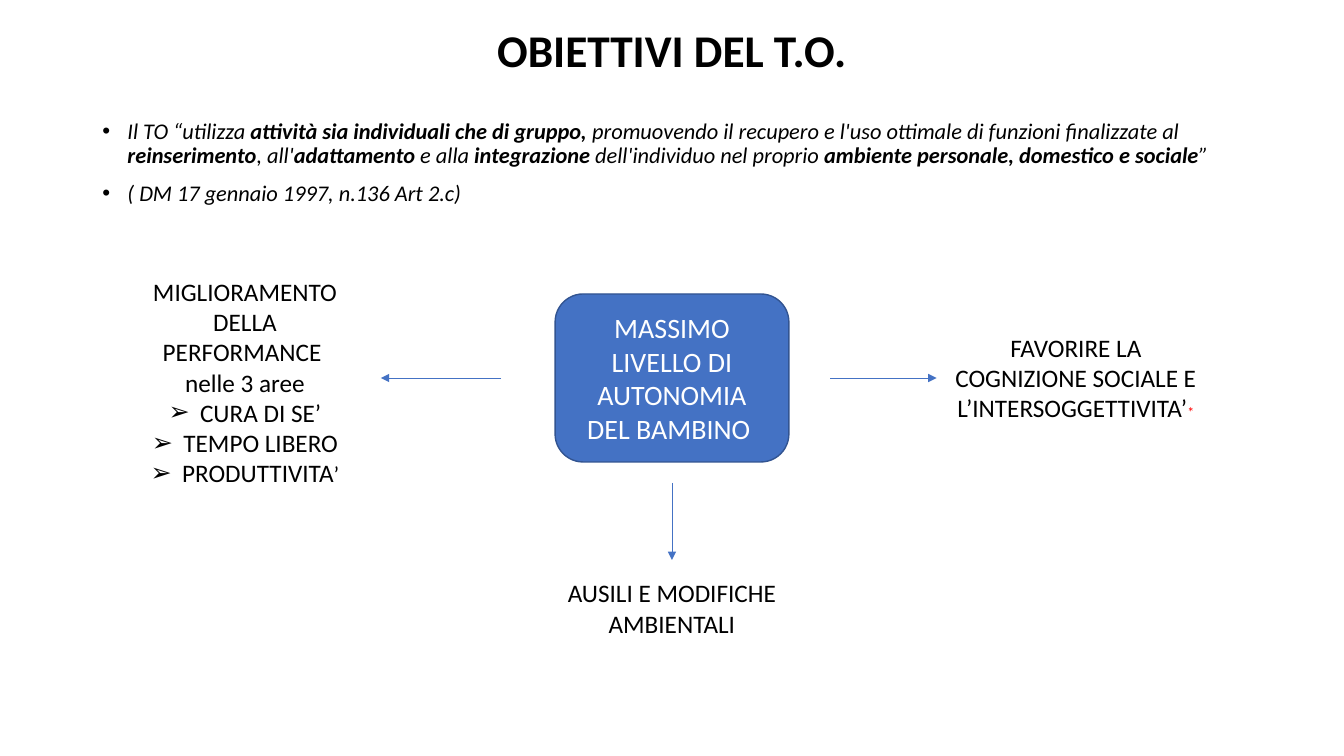
from dataclasses import dataclass

from lxml.etree import SubElement
from pptx import Presentation
from pptx.dml.color import RGBColor
from pptx.enum.shapes import MSO_CONNECTOR as Connector, MSO_SHAPE as Shape
from pptx.enum.text import MSO_ANCHOR as Anchor, MSO_AUTO_SIZE as AutoSize, PP_ALIGN as Align
from pptx.oxml.ns import qn
from pptx.util import Pt

# A paragraph is a list of (text, format) spans.
TITLE = [[("OBIETTIVI DEL T.O.", {"bold": True})]]
STRONG = {"bold": True}
DEFINITION = [
    [
        ("Il TO “utilizza ", {}),
        ("attività sia individuali che di gruppo,", STRONG),
        (" promuovendo il recupero e l'uso ottimale di funzioni finalizzate al ", {}),
        ("reinserimento", STRONG),
        (", all'", {}),
        ("adattamento", STRONG),
        (" e alla ", {}),
        ("integrazione", STRONG),
        (" dell'individuo nel proprio ", {}),
        ("ambiente personale, domestico e sociale", STRONG),
        ("”", {}),
    ],
    [("( DM 17 gennaio 1997, n.136 Art 2.c)", {})],
]
GOAL = [[("MASSIMO LIVELLO DI AUTONOMIA DEL BAMBINO ", {})]]
PERFORMANCE = [
    [("MIGLIORAMENTO DELLA PERFORMANCE ", {})],
    [("nelle 3 aree", {})],
    [("CURA DI SE’", {})],
    [("TEMPO LIBERO", {})],
    [("PRODUTTIVITA", {}), ("’", {"size": 16})],
]
COGNITION = [[("FAVORIRE LA COGNIZIONE SOCIALE E L’INTERSOGGETTIVITA’", {}),
              ("*", {"size": 10, "color": "FF0000"})]]
AIDS = [[("AUSILI E MODIFICHE AMBIENTALI", {})]]


@dataclass(frozen=True)
class Theme:
    font: str = "Calibri"
    ink: str = "000000"
    light: str = "FFFFFF"
    accent: str = "4472C4"
    edge: str = "325491"
    title: float = 32.4
    body: float = 16
    label: float = 18
    goal: float = 20


THEME = Theme()
PAGE_WIDTH, PAGE_HEIGHT = 960, 540
CENTER_X, CENTER_Y = PAGE_WIDTH / 2, 270


def set_bullet(para, symbol, indent):
    props = para._p.get_or_add_pPr()
    props.set("marL", str(Pt(indent)))
    props.set("indent", str(-Pt(indent)))
    SubElement(props, qn("a:buFont"), typeface="Arial")
    SubElement(props, qn("a:buChar"), char=symbol)


def write(shape, paragraphs, size, color=THEME.ink, italic=False, align=Align.CENTER,
          anchor=Anchor.TOP, line_spacing=1.0, space_before=0,
          bullet=None, indent=0, bullet_from=0):
    """Fill a shape with paragraphs; bullets start at paragraph bullet_from."""
    frame = shape.text_frame
    frame.word_wrap = True
    frame.vertical_anchor = anchor
    for index, spans in enumerate(paragraphs):
        para = frame.add_paragraph() if index else frame.paragraphs[0]
        para.alignment = align
        para.line_spacing = line_spacing
        para.space_before = Pt(space_before)
        if bullet and index >= bullet_from:
            set_bullet(para, bullet, indent)
        for text, style in spans:
            span = para.add_run()
            span.text = text
            span.font.name = THEME.font
            span.font.size = Pt(style.get("size", size))
            span.font.bold = style.get("bold", False)
            span.font.italic = italic
            span.font.color.rgb = RGBColor.from_string(style.get("color", color))


def add_text(page, left, top, width, height, paragraphs, size, grow=False, **style):
    box = page.shapes.add_textbox(Pt(left), Pt(top), Pt(width), Pt(height))
    write(box, paragraphs, size, **style)
    box.text_frame.auto_size = AutoSize.SHAPE_TO_FIT_TEXT if grow else AutoSize.NONE
    return box


def add_goal(page, width, height):
    box = page.shapes.add_shape(
        Shape.ROUNDED_RECTANGLE, Pt(CENTER_X - width / 2), Pt(CENTER_Y - height / 2),
        Pt(width), Pt(height))
    box.shadow.inherit = False
    box.fill.solid()
    box.fill.fore_color.rgb = RGBColor.from_string(THEME.accent)
    box.line.color.rgb = RGBColor.from_string(THEME.edge)
    box.line.width = Pt(1)
    write(box, GOAL, THEME.goal, color=THEME.light, anchor=Anchor.MIDDLE)


def add_arrow(page, start, end):
    arrow = page.shapes.add_connector(Connector.STRAIGHT, *map(Pt, start + end))
    arrow.line.color.rgb = RGBColor.from_string(THEME.accent)
    arrow.line.width = Pt(0.5)
    SubElement(arrow.line._get_or_add_ln(), qn("a:tailEnd"), type="triangle")
    SubElement(arrow._element.spPr, qn("a:effectLst"))
    return arrow


def main():
    deck = Presentation()
    deck.slide_width, deck.slide_height = Pt(PAGE_WIDTH), Pt(PAGE_HEIGHT)
    page = deck.slides.add_slide(deck.slide_layouts[6])

    add_text(page, 66, 6.5, 828, 62, TITLE, THEME.title,
             anchor=Anchor.MIDDLE, line_spacing=0.9)
    add_text(page, 66, 82, 828, 87, DEFINITION, THEME.body, italic=True,
             align=Align.LEFT, line_spacing=0.9, space_before=10, bullet="•", indent=18)

    add_text(page, 100, 193.7, 150, 160, PERFORMANCE, THEME.label, grow=True,
             bullet="➢", indent=22.5, bullet_from=2)
    add_goal(page, 167, 120)
    cognition = add_text(page, 669, CENTER_Y - 36.5, 199, 73, COGNITION,
                         THEME.label, grow=True)
    add_text(page, CENTER_X - 91.5, 409, 183, 51, AIDS, THEME.label, grow=True)

    add_arrow(page, (358, CENTER_Y), (272, CENTER_Y))
    add_arrow(page, (593, CENTER_Y), (669, CENTER_Y)).end_connect(cognition, 1)
    add_arrow(page, (CENTER_X, 345), (CENTER_X, 400))

    deck.save("out.pptx")


if __name__ == "__main__":
    main()
